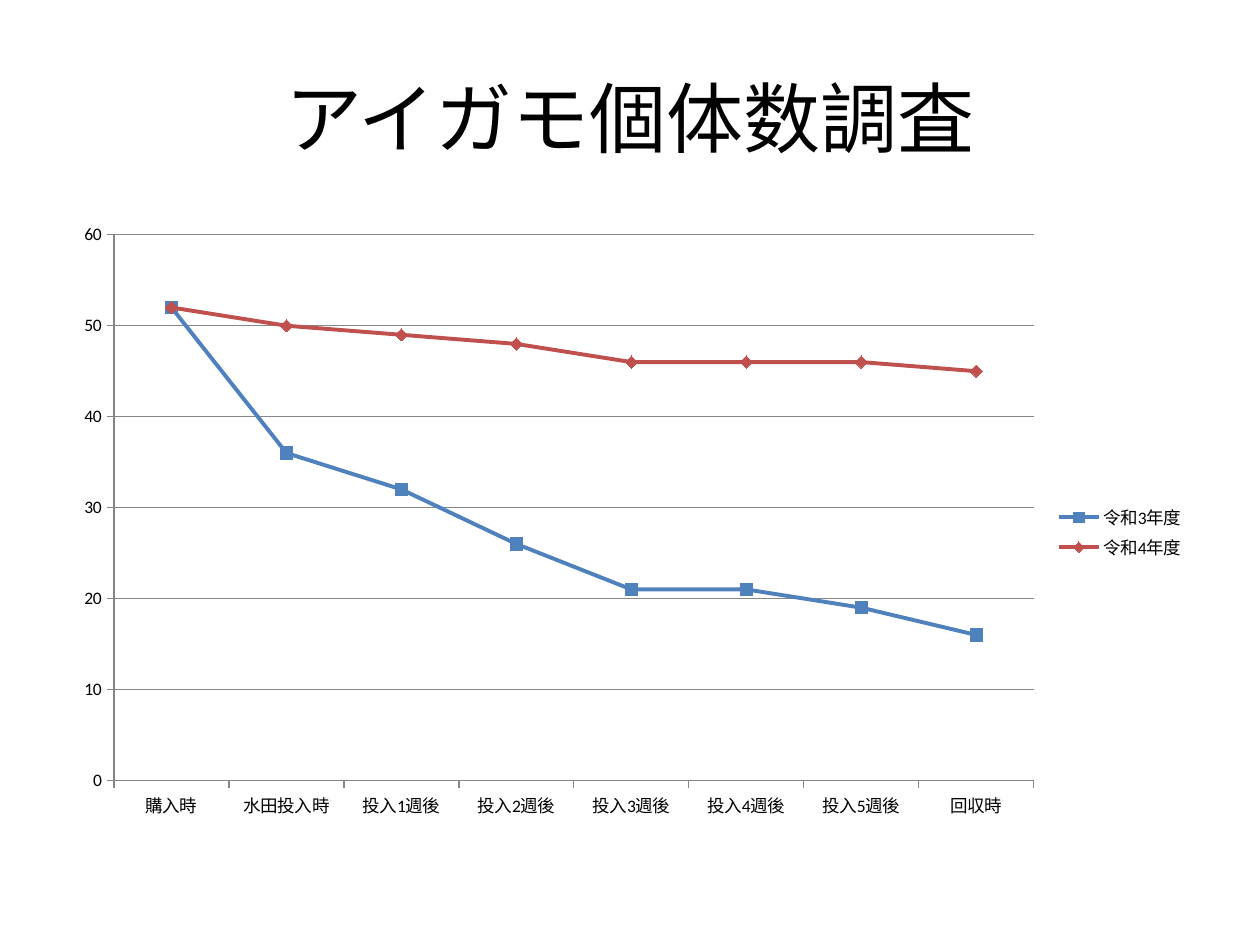
from lxml.etree import SubElement
from pptx import Presentation
from pptx.chart.data import CategoryChartData
from pptx.dml.color import RGBColor
from pptx.enum.chart import XL_CHART_TYPE, XL_LEGEND_POSITION, XL_MARKER_STYLE, XL_TICK_MARK
from pptx.enum.text import MSO_ANCHOR, PP_ALIGN
from pptx.oxml.ns import qn
from pptx.util import Inches, Pt

HUES = {"text": "000000", "axis": "868686", "blue": "4F81BD", "red": "C0504D"}
STAGES = ["購入時", "水田投入時", *(f"投入{week}週後" for week in range(1, 6)), "回収時"]
YEARS = [
    ("令和3年度", [52, 36, 32, 26, 21, 21, 19, 16], "blue", XL_MARKER_STYLE.SQUARE, 7),
    ("令和4年度", [52, 50, 49, 48, 46, 46, 46, 45], "red", XL_MARKER_STYLE.DIAMOND, 7),
]
PLOT = {"x": 0.045, "y": 0.023, "w": 0.811, "h": 0.875}


def hue(name):
    """Return a named colour."""
    return RGBColor.from_string(HUES[name])


def add_title(slide, text, left, top, width, height):
    """Place the centred slide title in its box."""
    frame = slide.shapes.add_textbox(left, top, width, height).text_frame
    frame.word_wrap = True
    frame.vertical_anchor = MSO_ANCHOR.MIDDLE
    line = frame.paragraphs[0]
    line.alignment = PP_ALIGN.CENTER
    run = line.add_run()
    run.text = text
    font = run.font
    font.name, font.size = "Noto Sans CJK JP", Pt(44)
    font.color.rgb = hue("text")
    SubElement(run._r.get_or_add_rPr(), qn("a:ea"), typeface="Noto Sans CJK JP")


def set_plot(chart):
    """Fix the inner plot area as shares of the chart."""
    area = chart._chartSpace.chart.plotArea
    for old in area.findall(qn("c:layout")):
        area.remove(old)
    layout = SubElement(area, qn("c:layout"))
    area.insert(0, layout)
    manual = SubElement(layout, qn("c:manualLayout"))
    SubElement(manual, qn("c:layoutTarget"), val="inner")
    for key in "xy":
        SubElement(manual, qn(f"c:{key}Mode"), val="edge")
    for key, share in PLOT.items():
        SubElement(manual, qn(f"c:{key}"), val=str(share))


def add_lines(slide, left, top, width, height):
    """Place the line chart of duck counts in its box."""
    data = CategoryChartData()
    data.categories = STAGES
    for name, counts, *_ in YEARS:
        data.add_series(name, counts)
    chart = slide.shapes.add_chart(
        XL_CHART_TYPE.LINE_MARKERS, left, top, width, height, data).chart
    chart.has_title = False
    chart.font.name, chart.font.size = "Calibri", Pt(10)
    chart.font.color.rgb = hue("text")
    chart.has_legend = True
    chart.legend.position = XL_LEGEND_POSITION.RIGHT
    chart.legend.include_in_layout = False
    plot = chart.plots[0]
    plot.vary_by_categories = False
    for series, (_, _, tint, style, size) in zip(plot.series, YEARS):
        series.smooth = False
        series.format.line.width = Pt(2.25)
        series.format.line.color.rgb = hue(tint)
        mark = series.marker
        mark.style, mark.size = style, size
        mark.format.fill.solid()
        mark.format.fill.fore_color.rgb = hue(tint)
        mark.format.line.color.rgb = hue(tint)
    counts = chart.value_axis
    counts.minimum_scale, counts.maximum_scale, counts.major_unit = 0, 60, 10
    counts.has_major_gridlines = True
    for axis in (chart.category_axis, counts):
        axis.major_tick_mark = XL_TICK_MARK.OUTSIDE
        axis.minor_tick_mark = XL_TICK_MARK.NONE
    for part in (chart.category_axis, counts, counts.major_gridlines):
        part.format.line.color.rgb = hue("axis")
        part.format.line.width = Pt(0.75)
    set_plot(chart)


def main():
    """Build and save the slide."""
    deck = Presentation()
    deck.slide_width, deck.slide_height = Inches(10), Inches(7.5)
    slide = deck.slides.add_slide(deck.slide_layouts[6])
    left, width = Inches(0.5), Inches(9)
    add_title(slide, "アイガモ個体数調査", left, Inches(0.3), width, Inches(1.25))
    add_lines(slide, left, Inches(1.75), width, Inches(4.95))
    deck.save("out.pptx")


if __name__ == "__main__":
    main()
